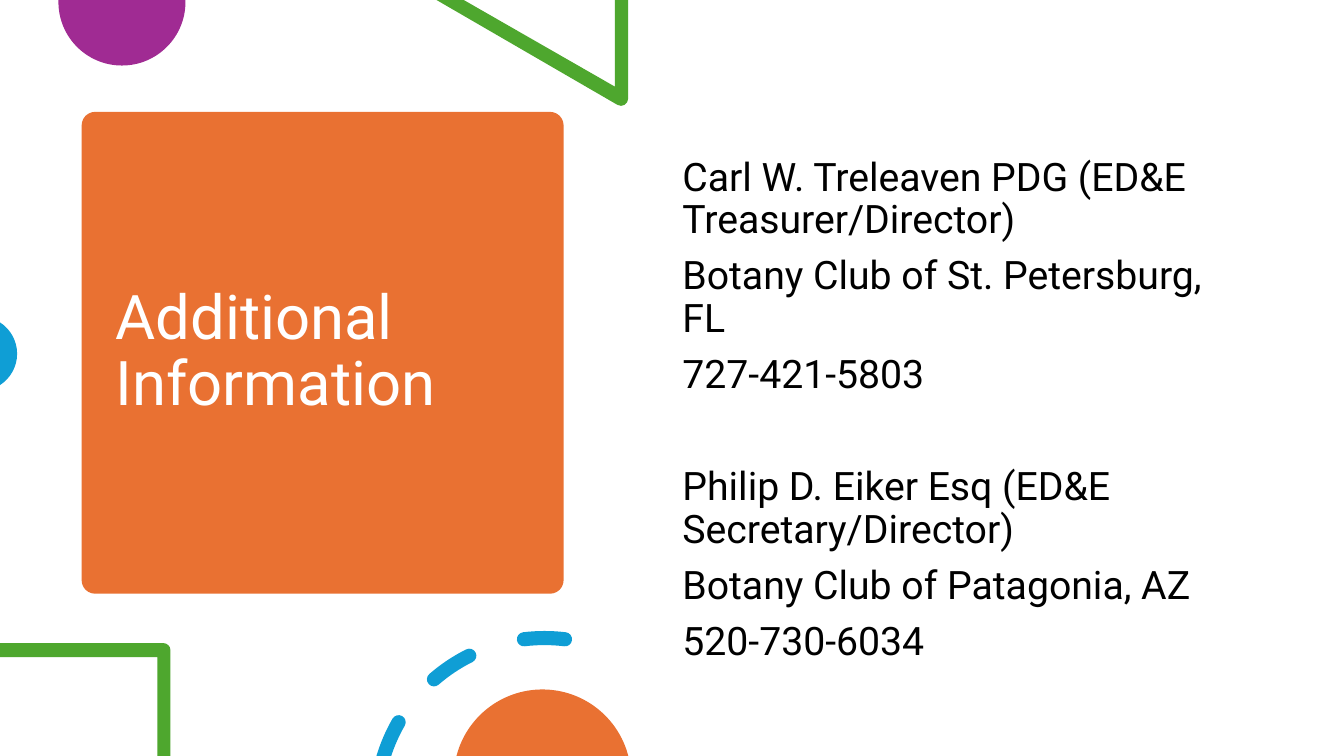
from dataclasses import dataclass
from math import asin, ceil, cos, degrees, radians, sin, tan

from lxml.etree import SubElement
from pptx import Presentation
from pptx.dml.color import RGBColor
from pptx.enum.shapes import MSO_SHAPE
from pptx.enum.text import MSO_ANCHOR, PP_ALIGN
from pptx.oxml.ns import qn
from pptx.util import Inches, Pt

CELL = Inches(1)
COLS, ROWS = 13.33, 7.5


@dataclass(frozen=True)
class Theme:
    """Colours, font and type sizes of the slide."""
    orange: str = "E97132"
    purple: str = "A02B93"
    green: str = "4EA72E"
    blue: str = "0F9ED5"
    white: str = "FFFFFF"
    black: str = "000000"
    font: str = "Roboto"
    title: int = 44
    body: int = 28
    leading: float = 0.9
    gap: int = 10
    group_gap: int = 50


THEME = Theme()
CONTACTS = [
    ["Carl W. Treleaven PDG (ED&E Treasurer/Director)",
     "Botany Club of St. Petersburg, FL",
     "727-421-5803"],
    ["Philip D. Eiker Esq (ED&E Secretary/Director)",
     "Botany Club of Patagonia, AZ",
     "520-730-6034"],
]


def grid(*cells):
    """Turn grid cells into slide lengths."""
    return [round(c * CELL) for c in cells]


def paint(sp, color):
    """Give a shape a flat fill without line or shadow."""
    sp.fill.solid()
    sp.fill.fore_color.rgb = RGBColor.from_string(color)
    sp.line.fill.background()
    sp.shadow.inherit = False


def corners(*points):
    """Return straight segments through the points."""
    return [(point,) for point in points]


def arc(cx, cy, radius, start, end):
    """Return an arc as Bezier segments, with angles clockwise from the right."""
    count = ceil(abs(end - start) / 90)
    step = radians(end - start) / count
    pull = radius * 4 / 3 * tan(step / 4)

    def at(angle, shift=0):
        return (cx + radius * cos(angle) - shift * sin(angle),
                cy + radius * sin(angle) + shift * cos(angle))

    angles = [radians(start) + i * step for i in range(count + 1)]
    return corners(at(angles[0])) + [(at(a, pull), at(b, -pull), at(b))
                                     for a, b in zip(angles, angles[1:])]


def add_outline(s, color, *contours):
    """Add one filled freeform made of closed contours."""
    builder, sizes = None, []
    for contour in contours:
        first, *rest = [[grid(*point) for point in segment] for segment in contour]
        if builder is None:
            builder = s.shapes.build_freeform(*first[0])
        else:
            builder.move_to(*first[0])
        points = []
        last = first[0]
        for segment in rest:
            if segment != [last]:
                points += segment
                sizes.append(len(segment))
            last = segment[-1]
        builder.add_line_segments(points, close=True)
    sp = builder.convert_to_shape()
    lines = iter(list(sp._element.iter(qn("a:lnTo"))))
    for size in sizes:
        group = [next(lines) for _ in range(size)]
        if size == 3:
            curve = SubElement(group[0].getparent(), qn("a:cubicBezTo"))
            group[0].addprevious(curve)
            for line in group:
                curve.append(line[0])
                line.getparent().remove(line)
    paint(sp, color)


def dash(cx, cy, radius, half, start, end):
    """Return a round-ended dash on a circle."""
    (tail,), (head,) = arc(cx, cy, radius, start, start + 1)[0], arc(cx, cy, radius, end, end + 1)[0]
    return (arc(cx, cy, radius + half, start, end)
            + arc(*head, half, end, end + 180)
            + arc(cx, cy, radius - half, end, start)
            + arc(*tail, half, start + 180, start + 360))


def cut_dash(cx, cy, radius, half, end):
    """Return a dash that rises from the slide's bottom edge."""
    (head,) = arc(cx, cy, radius, end, end + 1)[0]
    outer, inner = [180 + degrees(asin((cy - ROWS) / r))
                    for r in (radius + half, radius - half)]
    return (arc(cx, cy, radius + half, outer, end)
            + arc(*head, half, end, end + 180)
            + arc(cx, cy, radius - half, end, inner))


def add_card(s, x, y, side, color):
    """Add the rounded square behind the title."""
    sp = s.shapes.add_shape(MSO_SHAPE.ROUNDED_RECTANGLE, *grid(x, y, side, side))
    sp.adjustments[0] = 0.028
    paint(sp, color)


def add_text(s, box, lines, size, color, anchor, top=0.05):
    """Add a text box from pairs of text and space before."""
    tf = s.shapes.add_textbox(*grid(*box)).text_frame
    tf.word_wrap = True
    tf.vertical_anchor = anchor
    tf.margin_top = grid(top)[0]
    for i, (text, before) in enumerate(lines):
        p = tf.paragraphs[0] if i == 0 else tf.add_paragraph()
        p.text = text
        p.alignment = PP_ALIGN.LEFT
        p.line_spacing = THEME.leading
        p.space_before = Pt(before)
        p.font.name = THEME.font
        p.font.size = Pt(size)
        p.font.color.rgb = RGBColor.from_string(color)


def contact_lines():
    """Pair each contact line with the space before it."""
    lines = [(text, THEME.gap if i else THEME.group_gap)
             for contact in CONTACTS for i, text in enumerate(contact)]
    return [(lines[0][0], 0)] + lines[1:]


def add_decoration(s):
    """Add the discs, corners and dashes around the title."""
    ring = (5.4, 8, 1.67, 0.07)
    add_outline(s, THEME.purple, corners((1.84, 0), (0.58, 0))
                + arc(1.21, 0.02, 0.63, 180, 0))
    add_outline(s, THEME.green, corners((6.23, 0), (6.1, 0), (6.1, 0.86), (4.6, 0), (4.33, 0))
                + arc(6.16, 0.98, 0.07, 120, 0))
    add_outline(s, THEME.blue, arc(-0.2, 3.51, 0.37, -57, 57))
    add_outline(s, THEME.green, corners((0, 6.38)) + arc(1.62, 6.45, 0.07, 270, 360)
                + corners((1.69, ROWS), (1.56, ROWS), (1.56, 6.52), (0, 6.52)))
    add_outline(s, THEME.blue, cut_dash(*ring, 210), dash(*ring, 229, 243.5),
                dash(*ring, 263, 277))
    add_outline(s, THEME.orange, arc(5.38, 7.72, 0.88, 194.5, 345.5))


def main():
    """Build and save the slide."""
    prs = Presentation()
    prs.slide_width, prs.slide_height = grid(COLS, ROWS)
    s = prs.slides.add_slide(prs.slide_layouts[6])
    add_card(s, 0.81, 1.11, 4.78, THEME.orange)
    add_text(s, (1.05, 1.22, 4.31, 4.56), [("Additional Information", 0)],
             THEME.title, THEME.white, MSO_ANCHOR.MIDDLE)
    add_decoration(s)
    add_text(s, (6.67, 0.9, 5.75, 5.35), contact_lines(),
             THEME.body, THEME.black, MSO_ANCHOR.TOP, 0.66)
    prs.save("out.pptx")


if __name__ == "__main__":
    main()
